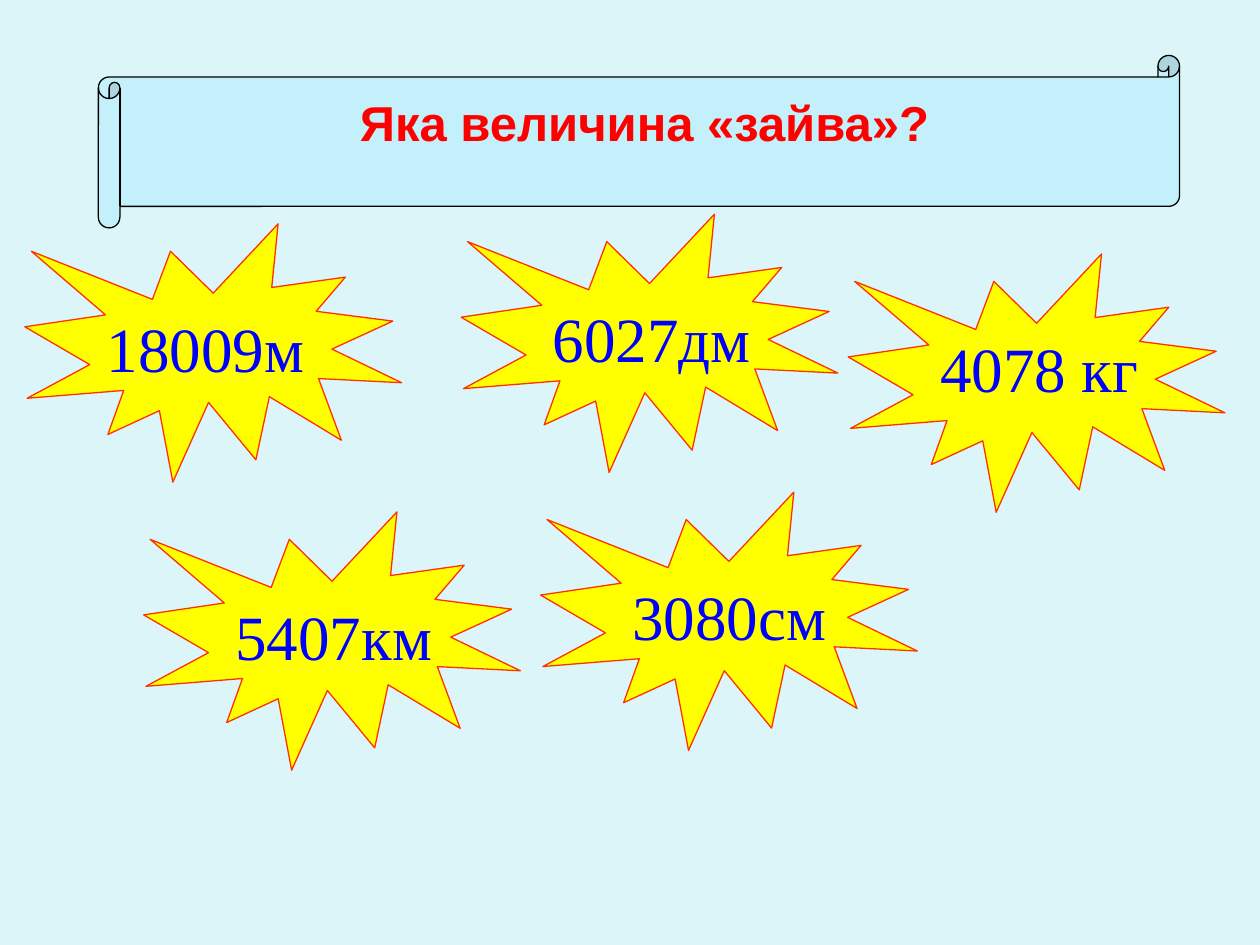
import dataclasses

import lxml.etree
import pptx
import pptx.dml.color
import pptx.enum.shapes
import pptx.enum.text
import pptx.oxml.ns
import pptx.util

Pt = pptx.util.Pt
Shape = pptx.enum.shapes.MSO_SHAPE
Align = pptx.enum.text.PP_ALIGN


@dataclasses.dataclass(frozen=True)
class Theme:
    background: str = "DBF5F9"
    scroll: str = "B5EDFD"
    scroll_alpha: int = 59
    scroll_line: str = "000000"
    star: str = "FFFF00"
    star_line: str = "FF3300"
    title: str = "FF0000"
    quantity: str = "0000FF"
    title_font: str = "Arial"
    quantity_font: str = "Times New Roman"
    title_size: int = 28
    quantity_size: int = 36
    line_width: float = 0.75


class SlideBuilder:
    def __init__(self, page, theme):
        self.page = page
        self.theme = theme
        fill = page.background.fill
        fill.solid()
        fill.fore_color.rgb = self.color(theme.background)

    def color(self, value):
        return pptx.dml.color.RGBColor.from_string(value)

    def shape(self, shapes, kind, bounds, fill, line):
        shape = shapes.add_shape(kind, *map(Pt, bounds))
        shape.shadow.inherit = False
        shape.fill.solid()
        shape.fill.fore_color.rgb = self.color(fill)
        shape.line.color.rgb = self.color(line)
        shape.line.width = Pt(self.theme.line_width)
        return shape

    def label(self, box, text, font, size, color, align, bold=False):
        frame = box.text_frame
        frame.word_wrap = True
        frame.auto_size = pptx.enum.text.MSO_AUTO_SIZE.NONE
        frame.vertical_anchor = pptx.enum.text.MSO_ANCHOR.TOP
        para = frame.paragraphs[0]
        para.alignment = align
        para.space_before = Pt(0)
        span = para.add_run()
        span.text = text
        span.font.name = font
        span.font.size = Pt(size)
        span.font.bold = bold
        span.font.color.rgb = self.color(color)

    def scroll(self, bounds):
        theme = self.theme
        scroll = self.shape(self.page.shapes, Shape.HORIZONTAL_SCROLL, bounds,
                            theme.scroll, theme.scroll_line)
        qn = pptx.oxml.ns.qn
        fill_color = scroll.element.spPr.find(qn("a:solidFill"))[0]
        lxml.etree.SubElement(fill_color, qn("a:alpha"), val=str(theme.scroll_alpha * 1000))

    def title(self, text, bounds):
        theme = self.theme
        title = self.page.shapes.title
        title.left, title.top, title.width, title.height = map(Pt, bounds)
        title.element.getparent().append(title.element)
        self.label(title, text, theme.title_font, theme.title_size,
                   theme.title, Align.CENTER, True)

    def star(self, text, left, top, inset_x=45.4, inset_y=45.4):
        theme = self.theme
        group = self.page.shapes.add_group_shape()
        self.shape(group.shapes, Shape.EXPLOSION1, (left, top, 215.3, 147.6),
                   theme.star, theme.star_line)
        bounds = (left + inset_x, top + inset_y, 153.4, 50.4)
        box = group.shapes.add_textbox(*map(Pt, bounds))
        self.label(box, text, theme.quantity_font, theme.quantity_size,
                   theme.quantity, Align.LEFT)


def main():
    deck = pptx.Presentation()
    deck.slide_width, deck.slide_height = Pt(720), Pt(540)
    page = deck.slides.add_slide(deck.slide_layouts[5])
    builder = SlideBuilder(page, Theme())
    builder.scroll((56.2, 31.7, 617.8, 98.6))
    builder.title("Яка величина «зайва»?", (82.1, 49, 572.4, 41))
    builder.star("18009м", 14.2, 127.9, inset_x=39.7)
    builder.star("4078 кг", 484.7, 145.1, inset_y=39.7)
    builder.star("5407км", 82.1, 292.5)
    builder.star("3080см", 308.9, 281.2)
    builder.star("6027дм", 263.5, 122.4)
    deck.save("out.pptx")


if __name__ == "__main__":
    main()
